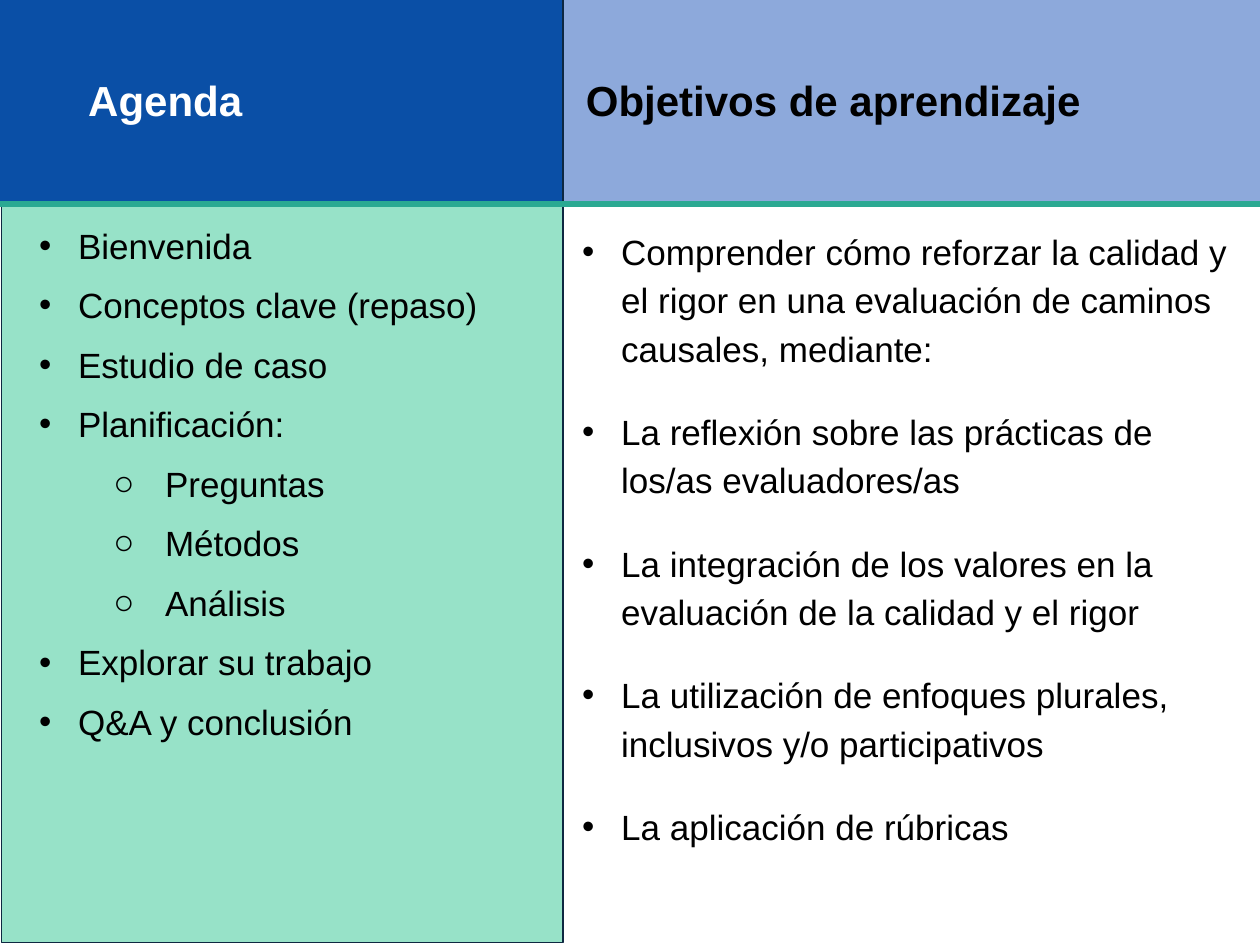
from lxml import etree
from pptx import Presentation
from pptx.dml.color import RGBColor
from pptx.enum.shapes import MSO_CONNECTOR, MSO_SHAPE
from pptx.enum.text import MSO_ANCHOR, MSO_AUTO_SIZE, PP_ALIGN
from pptx.oxml.ns import qn
from pptx.util import Inches, Pt

RECTANGLE = MSO_SHAPE.RECTANGLE
STRAIGHT = MSO_CONNECTOR.STRAIGHT
MIDDLE, TOP = MSO_ANCHOR.MIDDLE, MSO_ANCHOR.TOP
NO_FIT, GROW = MSO_AUTO_SIZE.NONE, MSO_AUTO_SIZE.SHAPE_TO_FIT_TEXT
LEFT = PP_ALIGN.LEFT

COMPARISON_LAYOUT = 4
FONT = "Arial"
COLORS = {
    "blue": "0A4FA6",
    "periwinkle": "8DA9DB",
    "mint": "97E2C8",
    "navy": "0E2841",
    "teal": "2BA992",
    "white": "FFFFFF",
    "black": "000000",
}
BULLETS = {0: ("•", 0.31, -0.31), 1: ("○", 1, -0.41)}

AGENDA = [
    ("Bienvenida", 0),
    ("Conceptos clave (repaso)", 0),
    ("Estudio de caso", 0),
    ("Planificación:", 0),
    ("Preguntas", 1),
    ("Métodos", 1),
    ("Análisis", 1),
    ("Explorar su trabajo", 0),
    ("Q&A y conclusión", 0),
]
OBJECTIVES = [
    ("Comprender cómo reforzar la calidad y el rigor en una evaluación "
     "de caminos causales, mediante:", 0),
    ("La reflexión sobre las prácticas de los/as evaluadores/as", 0),
    ("La integración de los valores en la evaluación de la calidad y el rigor", 0),
    ("La utilización de enfoques plurales, inclusivos y/o participativos", 0),
    ("La aplicación de rúbricas", 0),
]


def rgb(name):
    return RGBColor.from_string(COLORS[name])


def add_panel(slide, box, fill, outline=None):
    panel = slide.shapes.add_shape(RECTANGLE, *map(Inches, box))
    panel.shadow.inherit = False
    panel.fill.solid()
    panel.fill.fore_color.rgb = rgb(fill)
    if outline:
        panel.line.color.rgb = rgb(outline)
        panel.line.width = Pt(0.75)
    else:
        panel.line.fill.background()


def add_divider(slide, y):
    divider = slide.shapes.add_connector(
        STRAIGHT, Inches(0), Inches(y), Inches(10), Inches(y))
    divider.line.color.rgb = rgb("teal")
    divider.line.width = Pt(3)
    etree.SubElement(divider._element.spPr, qn("a:effectLst"))


def place(slide, holder, box, inset, anchor, fit):
    holder.left, holder.top, holder.width, holder.height = map(Inches, box)
    slide.shapes._spTree.append(holder._element)
    frame = holder.text_frame
    frame.word_wrap = True
    frame.auto_size = fit
    frame.vertical_anchor = anchor
    frame.margin_left = frame.margin_right = Inches(inset)
    frame.margin_top = frame.margin_bottom = Inches(inset)
    return frame


def style_text(paragraph, size, color, bold):
    paragraph.alignment = LEFT
    for run in paragraph.runs:
        run.font.name = FONT
        run.font.size = Pt(size)
        run.font.bold = bold
        run.font.color.rgb = rgb(color)


def fill_heading(slide, holder, box, text, color):
    frame = place(slide, holder, box, 0.05, MIDDLE, NO_FIT)
    frame.text = text
    heading = frame.paragraphs[0]
    heading.space_before = Pt(0)
    heading.line_spacing = 0.9
    style_text(heading, 24, color, True)


def add_bullet(paragraph, level):
    mark, margin, indent = BULLETS[level]
    properties = paragraph._p.get_or_add_pPr()
    properties.set("marL", str(Inches(margin)))
    properties.set("indent", str(Inches(indent)))
    bullet_color = etree.SubElement(properties, qn("a:buClr"))
    etree.SubElement(bullet_color, qn("a:srgbClr"), val=COLORS["black"])
    etree.SubElement(properties, qn("a:buFont"), typeface=FONT)
    etree.SubElement(properties, qn("a:buChar"), char=mark)


def fill_list(slide, holder, box, items, gap, spacing):
    frame = place(slide, holder, box, 0.1, TOP, GROW)
    frame.text = "\n".join(text for text, level in items)
    for position, (paragraph, (text, level)) in enumerate(zip(frame.paragraphs, items)):
        paragraph.level = level
        add_bullet(paragraph, level)
        paragraph.space_before = Pt(gap if position else 0)
        paragraph.line_spacing = spacing
        style_text(paragraph, 20, "black", False)


def main():
    prs = Presentation()
    prs.slide_width, prs.slide_height = Inches(10), Inches(7.5)
    slide = prs.slides.add_slide(prs.slide_layouts[COMPARISON_LAYOUT])
    agenda_title, objectives_title, agenda, spare, objectives = slide.placeholders
    slide.shapes._spTree.remove(spare._element)

    add_panel(slide, (4.47, -0.01, 5.53, 1.63), "periwinkle")
    add_panel(slide, (0.01, -0.02, 4.46, 7.5), "mint", "navy")
    add_panel(slide, (0, -0.01, 4.46, 1.63), "blue")
    add_divider(slide, 1.62)

    fill_heading(slide, agenda_title, (0.65, 0.51, 3.38, 0.61), "Agenda", "white")
    fill_list(slide, agenda, (0.21, 1.68, 4.06, 4.49), AGENDA, 10, 1.0)
    fill_heading(slide, objectives_title, (4.6, 0.51, 5.24, 0.61),
                 "Objetivos de aprendizaje", "black")
    fill_list(slide, objectives, (4.52, 1.68, 5.4, 5.48), OBJECTIVES, 20, 1.15)

    prs.save("out.pptx")


if __name__ == "__main__":
    main()
